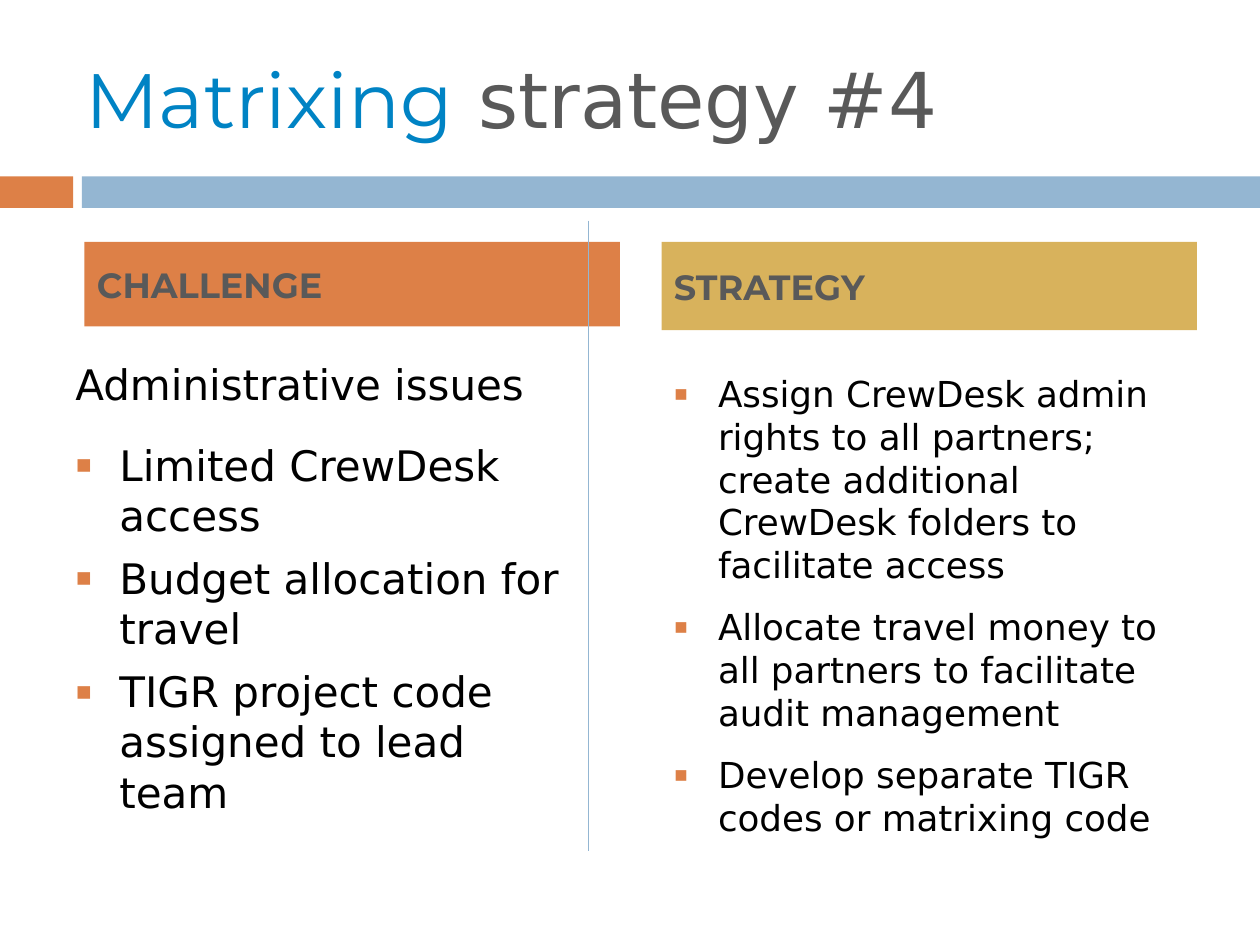
import pptx
import pptx.dml.color
import pptx.enum.shapes
import pptx.enum.text
import pptx.oxml
import pptx.oxml.ns
import pptx.util
from lxml import etree

Inches, Pt = pptx.util.Inches, pptx.util.Pt
RGBColor = pptx.dml.color.RGBColor
ANCHOR = pptx.enum.text.MSO_ANCHOR

ORANGE = RGBColor(0xDD, 0x80, 0x47)
BLUE = RGBColor(0x94, 0xB6, 0xD2)
GOLD = RGBColor(0xD8, 0xB2, 0x5C)
TITLE_BLUE = RGBColor(0x00, 0x83, 0xC4)
GRAY = RGBColor(0x59, 0x59, 0x59)
BLACK = RGBColor(0, 0, 0)
HEADING_FONT, BODY_FONT = "Montserrat", "DejaVu Sans"

# Content
TITLE = [("Matrixing", HEADING_FONT, TITLE_BLUE), (" strategy #4", BODY_FONT, GRAY)]
# Paragraphs: text, bulleted, space before, space after
COLUMNS = [
    {"heading": "CHALLENGE", "fill": ORANGE, "heading_box": (0.67, 1.92, 4.25, 0.67),
     "body_box": (0.5, 2.8, 4.17, 3.9), "size": 24,
     "paragraphs": [
         ("Administrative issues", False, 0, 10),
         ("Limited CrewDesk access", True, 7, 0),
         ("Budget allocation for travel", True, 7, 0),
         ("TIGR project code assigned to lead team", True, 7, 0)]},
    {"heading": "STRATEGY", "fill": GOLD, "heading_box": (5.25, 1.92, 4.25, 0.7),
     "body_box": (5.25, 2.9, 4.25, 3.69), "size": 20.4,
     "paragraphs": [
         ("Assign CrewDesk admin rights to all partners; create additional "
          "CrewDesk folders to facilitate access", True, 0, 4),
         ("Allocate travel money to all partners to facilitate audit management", True, 7, 4),
         ("Develop separate TIGR codes or matrixing code", True, 7, 0)]},
]

presentation = pptx.Presentation()
presentation.slide_width, presentation.slide_height = Inches(10), Inches(7.5)
slide = presentation.slides.add_slide(presentation.slide_layouts[6])


def add_bar(box, color):
    shape = slide.shapes.add_shape(
        pptx.enum.shapes.MSO_SHAPE.RECTANGLE, *map(Inches, box))
    shape.shadow.inherit = False
    shape.fill.solid()
    shape.fill.fore_color.rgb = color
    shape.line.fill.background()
    return shape


def prepare_frame(shape, anchor):
    frame = shape.text_frame
    frame.word_wrap = True
    frame.vertical_anchor = anchor
    return frame


def style_font(font, name, size, color, bold=False):
    font.name, font.size, font.bold = name, Pt(size), bold
    font.color.rgb = color


def add_bullet(paragraph):
    properties = paragraph._p.get_or_add_pPr()
    properties.set("marL", str(Inches(0.35)))
    properties.set("indent", str(-Inches(0.35)))
    namespace = pptx.oxml.ns.nsdecls("a")
    for xml in (f'<a:buClr {namespace}><a:srgbClr val="{ORANGE}"/></a:buClr>',
                f'<a:buSzPct {namespace} val="60000"/>',
                f'<a:buFont {namespace} typeface="{BODY_FONT}"/>',
                f'<a:buChar {namespace} char="▪"/>'):
        properties.append(pptx.oxml.parse_xml(xml))


def add_column(column):
    # Heading bar
    frame = prepare_frame(add_bar(column["heading_box"], column["fill"]), ANCHOR.MIDDLE)
    paragraph = frame.paragraphs[0]
    paragraph.text = column["heading"]
    paragraph.alignment = pptx.enum.text.PP_ALIGN.LEFT
    paragraph.space_before = Pt(7)
    style_font(paragraph.font, HEADING_FONT, 20, GRAY, True)

    # Body text
    textbox = slide.shapes.add_textbox(*map(Inches, column["body_box"]))
    frame = prepare_frame(textbox, ANCHOR.TOP)
    for index, (text, bulleted, before, after) in enumerate(column["paragraphs"]):
        paragraph = frame.add_paragraph() if index else frame.paragraphs[0]
        paragraph.text = text
        paragraph.space_before, paragraph.space_after = Pt(before), Pt(after)
        if bulleted:
            add_bullet(paragraph)
        style_font(paragraph.font, BODY_FONT, column["size"], BLACK)


# Band under the title
add_bar((0, 1.4, 0.58, 0.25), ORANGE)
add_bar((0.65, 1.4, 9.35, 0.25), BLUE)

# Title
title_box = slide.shapes.add_textbox(*map(Inches, (0.58, 0.3, 8.92, 0.95)))
title_paragraph = prepare_frame(title_box, ANCHOR.MIDDLE).paragraphs[0]
for text, font_name, color in TITLE:
    run = title_paragraph.add_run()
    run.text = text
    style_font(run.font, font_name, 44, color)

# Two columns
for column in COLUMNS:
    add_column(column)

# Divider between the columns
divider = slide.shapes.add_connector(
    pptx.enum.shapes.MSO_CONNECTOR.STRAIGHT, *map(Inches, (4.67, 1.75, 4.67, 6.75)))
divider.line.color.rgb = BLUE
divider.line.width = Pt(0.79)
etree.SubElement(divider._element.spPr, pptx.oxml.ns.qn("a:effectLst"))

presentation.save("out.pptx")
